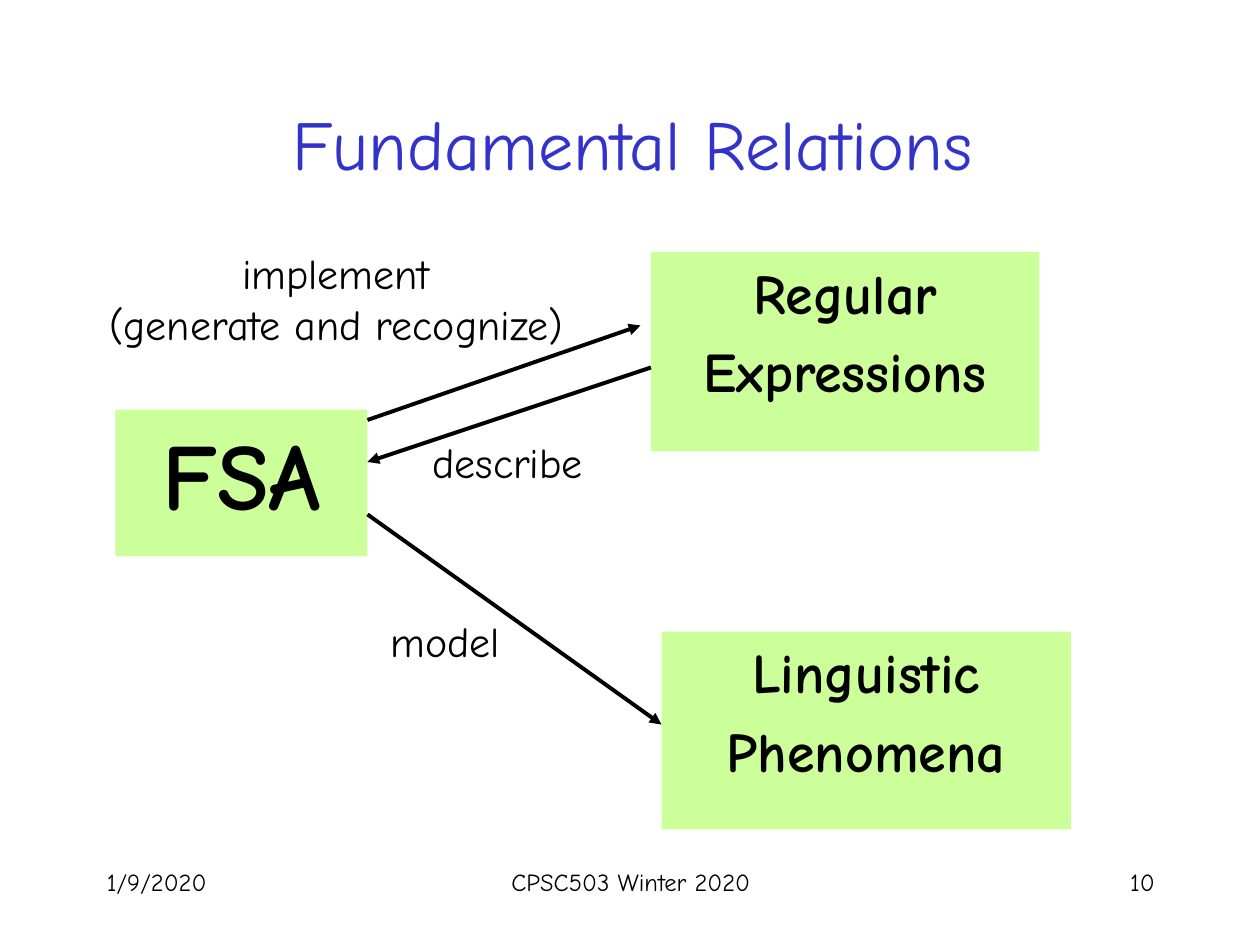
from dataclasses import dataclass

from lxml.etree import SubElement
from pptx import Presentation
from pptx.dml.color import RGBColor
from pptx.enum.shapes import MSO_CONNECTOR, MSO_SHAPE
from pptx.enum.text import MSO_ANCHOR as Anchor, PP_ALIGN as Align
from pptx.oxml.ns import qn
from pptx.util import Pt


@dataclass(frozen=True)
class Theme:
    font: str = "Comic Neue"
    ink: str = "000000"
    title_ink: str = "3333CC"
    node_fill: str = "CCFF99"
    title: int = 40
    main_node: int = 54
    node: int = 32
    label: int = 24
    footer: int = 14
    arrow: float = 2.25


THEME = Theme()


def write(sp, lines, size, color=THEME.ink, align=Align.LEFT,
          anchor=Anchor.TOP, bold=False, space=0):
    tf = sp.text_frame
    tf.word_wrap = True
    tf.vertical_anchor = anchor
    for i, line in enumerate(lines):
        p = tf.add_paragraph() if i else tf.paragraphs[0]
        p.alignment = align
        p.space_before = Pt(space)
        r = p.add_run()
        r.text = line
        formats = {"name": THEME.font, "size": Pt(size), "bold": bold}
        for name, value in formats.items():
            setattr(r.font, name, value)
        r.font.color.rgb = RGBColor.from_string(color)


def add_text(s, box, lines, size, **formats):
    sp = s.shapes.add_textbox(*map(Pt, box))
    write(sp, lines, size, **formats)


def add_node(s, box, lines, size):
    sp = s.shapes.add_shape(MSO_SHAPE.RECTANGLE, *map(Pt, box))
    sp.shadow.inherit = False
    sp.fill.solid()
    sp.fill.fore_color.rgb = RGBColor.from_string(THEME.node_fill)
    sp.line.fill.background()
    write(sp, lines, size, align=Align.CENTER, bold=True, space=size * 0.2)


def add_arrow(s, start, end, tip):
    line = s.shapes.add_connector(
        MSO_CONNECTOR.STRAIGHT, *map(Pt, (*start, *end)))
    line.line.width = Pt(THEME.arrow)
    line.line.color.rgb = RGBColor.from_string(THEME.ink)
    SubElement(line.line._get_or_add_ln(), qn(f"a:{tip}"), type="triangle")
    SubElement(line._element.spPr, qn("a:effectLst"))


def add_footer(s, box):
    x, y, w, h = box
    side, middle = 150, 228
    parts = [
        ("1/9/2020", 0, side, Align.LEFT),
        ("CPSC503 Winter 2020", (w - middle) / 2, middle, Align.CENTER),
        ("10", w - side, side, Align.RIGHT),
    ]
    for text, dx, width, align in parts:
        add_text(s, (x + dx, y, width, h), [text], THEME.footer, align=align)


def add_title(s, box):
    add_text(s, box, ["Fundamental Relations"], THEME.title,
             color=THEME.title_ink, align=Align.CENTER, anchor=Anchor.MIDDLE)


def add_relations(s, box):
    x, y, w, h = box
    right = 174
    nodes = [
        ((30, 96, right - 30, 84), ["FSA"], THEME.main_node),
        ((336, 6, 222, 114), ["Regular", "Expressions"], THEME.node),
        ((342, 223, w - 342, h - 223), ["Linguistic", "Phenomena"], THEME.node),
    ]
    arrows = [
        ((right, 102), (330, 48), "tailEnd"),
        ((right, 126), (336, 72), "headEnd"),
        ((right, 156), (342, 276), "tailEnd"),
    ]
    labels = [
        ((180, 210, 92, 36), ["model"], Align.LEFT),
        ((0, 0, 312, 65), ["implement", "(generate and recognize)"],
         Align.CENTER),
        ((204, 108, 132, 36), ["describe"], Align.LEFT),
    ]
    for (dx, dy, *extent), lines, size in nodes:
        add_node(s, (x + dx, y + dy, *extent), lines, size)
    for (x1, y1), (x2, y2), tip in arrows:
        add_arrow(s, (x + x1, y + y1), (x + x2, y + y2), tip)
    for (dx, dy, *extent), lines, align in labels:
        add_text(s, (x + dx, y + dy, *extent), lines, THEME.label, align=align)


def main():
    prs = Presentation()
    prs.slide_width, prs.slide_height = Pt(720), Pt(540)
    s = prs.slides.add_slide(prs.slide_layouts[6])
    add_footer(s, (54, 492, 613, 36))
    add_title(s, (55.5, 36.5, 612, 90))
    add_relations(s, (36, 138, 576, 336))
    prs.save("out.pptx")


if __name__ == "__main__":
    main()
